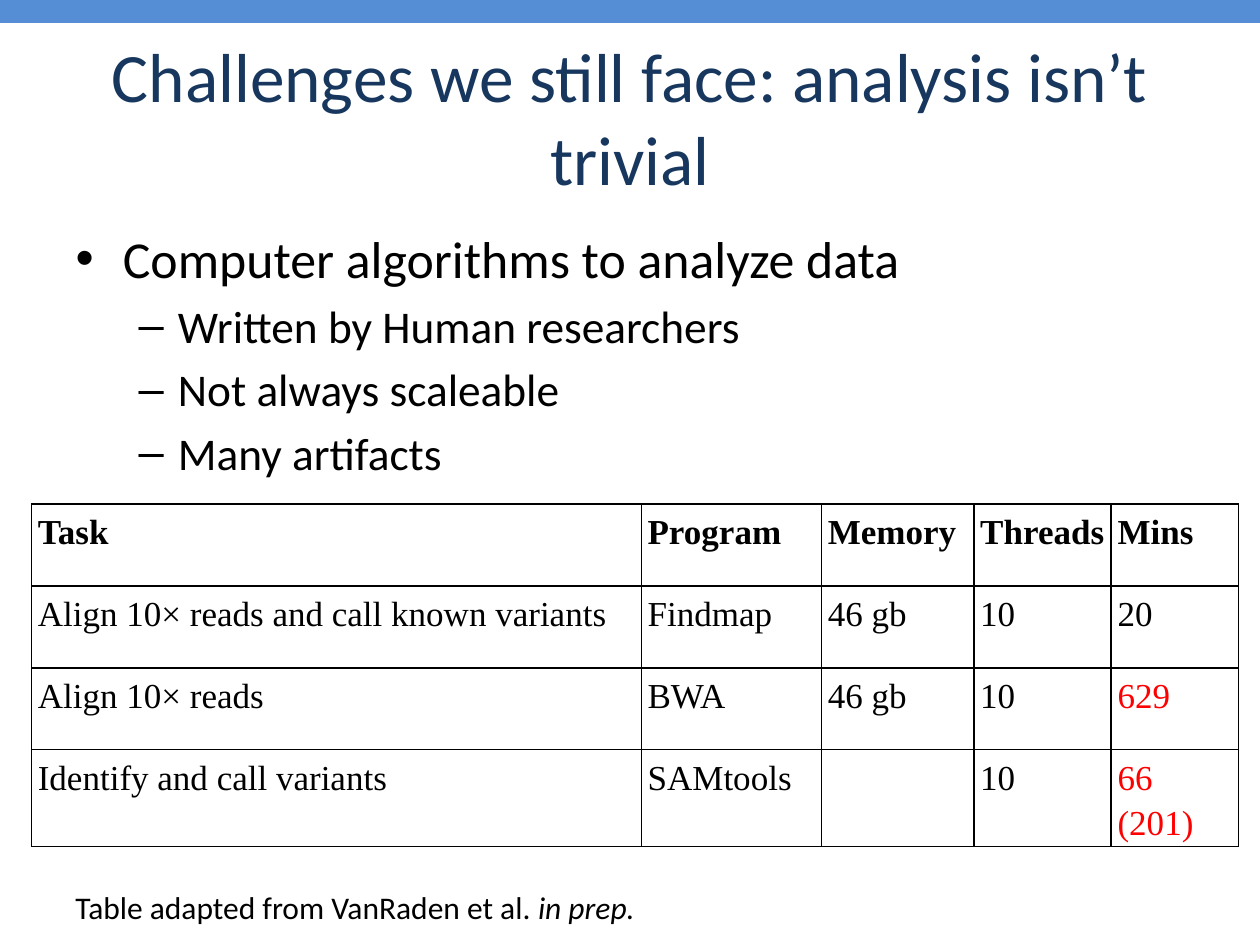
from dataclasses import dataclass

from lxml import etree
from pptx import Presentation
from pptx.dml.color import RGBColor
from pptx.enum import shapes, text
from pptx.oxml import ns
from pptx.util import Inches, Pt


@dataclass(frozen=True)
class Theme:
    sans: str = "Calibri"
    serif: str = "Times New Roman"
    ink: str = "000000"
    heading: str = "17375E"
    band: str = "558ED5"
    alert: str = "FF0000"
    title_size: float = 39.6
    level_sizes: tuple = (29.6, 25.9)
    cell_size: float = 20
    note_size: float = 18


class Deck:
    def __init__(self, prs, theme):
        self.theme = theme
        self.slide = prs.slides.add_slide(prs.slide_layouts[1])

    def style(self, p, size, color, face, bold=None):
        p.font.name = face
        p.font.size = Pt(size)
        p.font.bold = bold
        p.font.color.rgb = RGBColor.from_string(color)

    def place(self, sp, left, top, width, height):
        sp.left, sp.top = Inches(left), Inches(top)
        sp.width, sp.height = Inches(width), Inches(height)
        sp.text_frame.auto_size = text.MSO_AUTO_SIZE.NONE
        return sp.text_frame

    def title(self, words, *box):
        tf = self.place(self.slide.shapes.title, *box)
        tf.vertical_anchor = text.MSO_ANCHOR.MIDDLE
        p = tf.paragraphs[0]
        p.text = words
        p.alignment = text.PP_ALIGN.CENTER
        self.style(p, self.theme.title_size, self.theme.heading, self.theme.sans)

    def bullets(self, items, *box):
        tf = self.place(self.slide.placeholders[1], *box)
        tf.text = "\n".join(words for level, words in items)
        for p, (level, words) in zip(tf.paragraphs, items):
            p.level = level
            self.style(p, self.theme.level_sizes[level], self.theme.ink, self.theme.sans)

    def borders(self, cell):
        tc_pr = cell._tc.get_or_add_tcPr()
        for i, side in enumerate(("lnL", "lnR", "lnT", "lnB")):
            ln = etree.Element(ns.qn(f"a:{side}"), w=str(Pt(1)))
            fill = etree.SubElement(ln, ns.qn("a:solidFill"))
            etree.SubElement(fill, ns.qn("a:srgbClr"), val=self.theme.ink)
            tc_pr.insert(i, ln)

    def table(self, rows, widths, row_height, left, top, alerts):
        frame = self.slide.shapes.add_table(
            len(rows), len(widths), Inches(left), Inches(top),
            Inches(sum(widths)), Inches(row_height * len(rows)))
        table = frame.table
        for column, width in zip(table.columns, widths):
            column.width = Inches(width)
        for r, row in enumerate(rows):
            table.rows[r].height = Inches(row_height)
            for c, words in enumerate(row):
                cell = table.cell(r, c)
                cell.fill.background()
                cell.margin_left = cell.margin_right = Inches(0.05)
                cell.margin_top = cell.margin_bottom = Inches(0.03)
                p = cell.text_frame.paragraphs[0]
                p.text = words
                p.line_spacing = 1.15
                color = self.theme.alert if words in alerts else self.theme.ink
                self.style(p, self.theme.cell_size, color, self.theme.serif, r == 0)
                self.borders(cell)

    def note(self, words, emphasis, left, top, width, height):
        sp = self.slide.shapes.add_textbox(
            Inches(left), Inches(top), Inches(width), Inches(height))
        tf = sp.text_frame
        tf.word_wrap = False
        tf.auto_size = text.MSO_AUTO_SIZE.SHAPE_TO_FIT_TEXT
        p = tf.paragraphs[0]
        self.style(p, self.theme.note_size, self.theme.ink, self.theme.sans)
        p.add_run().text = words
        r = p.add_run()
        r.text = emphasis
        r.font.italic = True

    def band(self, left, top, width, height):
        sp = self.slide.shapes.add_shape(
            shapes.MSO_SHAPE.RECTANGLE, Inches(left), Inches(top),
            Inches(width), Inches(height))
        sp.shadow.inherit = False
        color = RGBColor.from_string(self.theme.band)
        sp.fill.solid()
        sp.fill.fore_color.rgb = color
        sp.line.color.rgb = color
        sp.line.width = Pt(2)


def main():
    prs = Presentation()
    prs.slide_width, prs.slide_height = Inches(10), Inches(7.5)
    deck = Deck(prs, Theme())
    deck.title("Challenges we still face: analysis isn’t trivial", 0.5, 0.3, 9, 1.25)
    deck.bullets([
        (0, "Computer algorithms to analyze data"),
        (1, "Written by Human researchers"),
        (1, "Not always scaleable"),
        (1, "Many artifacts"),
    ], 0.5, 1.75, 9, 2)
    deck.table([
        ("Task", "Program", "Memory", "Threads", "Mins"),
        ("Align 10× reads and call known variants", "Findmap", "46 gb", "10", "20"),
        ("Align 10× reads", "BWA", "46 gb", "10", "629"),
        ("Identify and call variants", "SAMtools", "", "10", "66 (201)"),
    ], (4.84, 1.43, 1.21, 1.09, 1.01), 0.65, 0.25, 4, alerts=("629", "66 (201)"))
    deck.note("Table adapted from VanRaden et al. ", "in prep.", 0.5, 7, 4.71, 0.4)
    deck.band(0, 0, 10, 0.17)
    prs.save("out.pptx")


if __name__ == "__main__":
    main()
